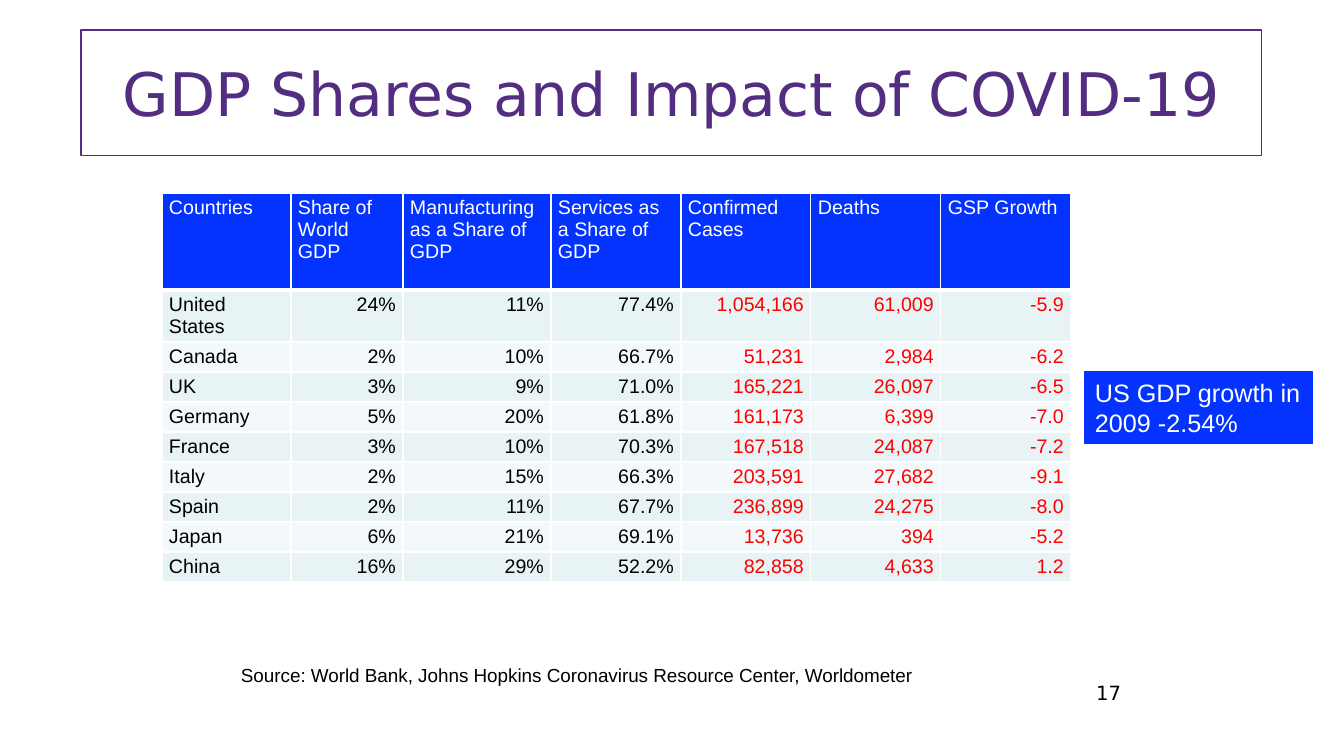
from lxml import etree
from pptx import Presentation, util as u
from pptx.dml.color import RGBColor
from pptx.enum import shapes, text
from pptx.oxml.ns import qn

PURPLE = RGBColor(0x52, 0x2D, 0x80)
BLUE = RGBColor(0x04, 0x32, 0xFF)
RED = RGBColor(0xFF, 0x00, 0x00)
BLACK = RGBColor(0x00, 0x00, 0x00)
WHITE = RGBColor(0xFF, 0xFF, 0xFF)
BANDS = (RGBColor(0xE7, 0xF3, 0xF4), RGBColor(0xF3, 0xF9, 0xFA))

LEFT, CENTER, RIGHT = text.PP_ALIGN.LEFT, text.PP_ALIGN.CENTER, text.PP_ALIGN.RIGHT
TITLE_FONT, BODY_FONT = "DejaVu Sans", "Arial"

COLUMN_WIDTHS = (129, 112, 148, 130, 130, 130, 130)
HEADER_HEIGHT, TALL_HEIGHT, ROW_HEIGHT = 97, 52, 30
FIRST_RED_COLUMN = 4
COUNTRY_ROWS = (
    ("Countries", "Share of World GDP", "Manufacturing as a Share of GDP",
     "Services as a Share of GDP", "Confirmed Cases", "Deaths", "GSP Growth"),
    ("United States", "24%", "11%", "77.4%", "1,054,166", "61,009", "-5.9"),
    ("Canada", "2%", "10%", "66.7%", "51,231", "2,984", "-6.2"),
    ("UK", "3%", "9%", "71.0%", "165,221", "26,097", "-6.5"),
    ("Germany", "5%", "20%", "61.8%", "161,173", "6,399", "-7.0"),
    ("France", "3%", "10%", "70.3%", "167,518", "24,087", "-7.2"),
    ("Italy", "2%", "15%", "66.3%", "203,591", "27,682", "-9.1"),
    ("Spain", "2%", "11%", "67.7%", "236,899", "24,275", "-8.0"),
    ("Japan", "6%", "21%", "69.1%", "13,736", "394", "-5.2"),
    ("China", "16%", "29%", "52.2%", "82,858", "4,633", "1.2"),
)


def px(length):
    return u.Emu(round(length * 914400 / 100.8))


def set_attributes(target, values):
    for name, value in values.items():
        setattr(target, name, value)


def write(frame, lines, font, size, color, align=LEFT):
    frame.text = "\n".join(lines)
    for paragraph in frame.paragraphs:
        paragraph.alignment = align
        set_attributes(paragraph.font, {"name": font, "size": u.Pt(size), "bold": False})
        paragraph.font.color.rgb = color


def outline(shape, color):
    shape.line.color.rgb = color
    shape.line.width = u.Pt(0.75)


def add_title(slide, box):
    title = slide.shapes.title
    set_attributes(title, dict(zip(("left", "top", "width", "height"), map(px, box))))
    outline(title, PURPLE)
    set_attributes(title.text_frame, {
        "word_wrap": True,
        "auto_size": text.MSO_AUTO_SIZE.NONE,
        "vertical_anchor": text.MSO_ANCHOR.MIDDLE,
    })
    write(title.text_frame, ["GDP Shares and Impact of COVID-19"],
          TITLE_FONT, 42.9, PURPLE, CENTER)


def add_borders(cell, bottom_width):
    properties = cell._tc.get_or_add_tcPr()
    widths = {"a:lnL": 1, "a:lnR": 1, "a:lnT": 1, "a:lnB": bottom_width}
    for position, (tag, width) in enumerate(widths.items()):
        border = etree.Element(qn(tag), w=str(u.Pt(width)))
        fill = etree.SubElement(border, qn("a:solidFill"))
        etree.SubElement(fill, qn("a:srgbClr"), val=str(WHITE))
        properties.insert(position, border)


def format_cell(cell, value, row, column):
    is_header = row == 0
    set_attributes(cell, {
        "margin_left": px(7), "margin_right": px(7),
        "margin_top": px(4), "margin_bottom": px(4),
    })
    cell.fill.solid()
    cell.fill.fore_color.rgb = BLUE if is_header else BANDS[(row - 1) % 2]
    add_borders(cell, 3 if is_header else 1)
    color = WHITE if is_header else RED if column >= FIRST_RED_COLUMN else BLACK
    align = LEFT if is_header or column == 0 else RIGHT
    write(cell.text_frame, [value], BODY_FONT, 14, color, align)


def add_country_table(slide, left, top):
    heights = [HEADER_HEIGHT, TALL_HEIGHT] + [ROW_HEIGHT] * (len(COUNTRY_ROWS) - 2)
    table = slide.shapes.add_table(
        len(heights), len(COLUMN_WIDTHS), px(left), px(top),
        px(sum(COLUMN_WIDTHS)), px(sum(heights))).table
    for column, width in zip(table.columns, COLUMN_WIDTHS):
        column.width = px(width)
    for row, height in zip(table.rows, heights):
        row.height = px(height)
    for row, values in enumerate(COUNTRY_ROWS):
        for column, value in enumerate(values):
            format_cell(table.cell(row, column), value, row, column)


def add_growth_callout(slide, box):
    callout = slide.shapes.add_shape(shapes.MSO_SHAPE.RECTANGLE, *map(px, box))
    callout.shadow.inherit = False
    callout.fill.solid()
    callout.fill.fore_color.rgb = BLUE
    outline(callout, BLUE)
    set_attributes(callout.text_frame, {
        "word_wrap": False, "vertical_anchor": text.MSO_ANCHOR.TOP})
    write(callout.text_frame, ["US GDP growth in", "2009 -2.54%"], BODY_FONT, 18, WHITE)


def add_label(slide, box, label, font, size, align, wrap):
    frame = slide.shapes.add_textbox(*map(px, box)).text_frame
    frame.word_wrap = wrap
    write(frame, [label], font, size, BLACK, align)


def main():
    presentation = Presentation()
    set_attributes(presentation, {"slide_width": px(1344), "slide_height": px(756)})
    slide = presentation.slides.add_slide(presentation.slide_layouts[5])
    add_title(slide, (81, 30, 1181, 126))
    add_country_table(slide, 162, 193)
    add_label(slide, (231, 659, 702, 33),
              "Source: World Bank, Johns Hopkins Coronavirus Resource Center, Worldometer",
              BODY_FONT, 13.5, LEFT, False)
    add_growth_callout(slide, (1085, 372, 228, 72))
    add_label(slide, (896, 676, 235, 40), "17", TITLE_FONT, 14, RIGHT, True)
    presentation.save("out.pptx")


if __name__ == "__main__":
    main()
